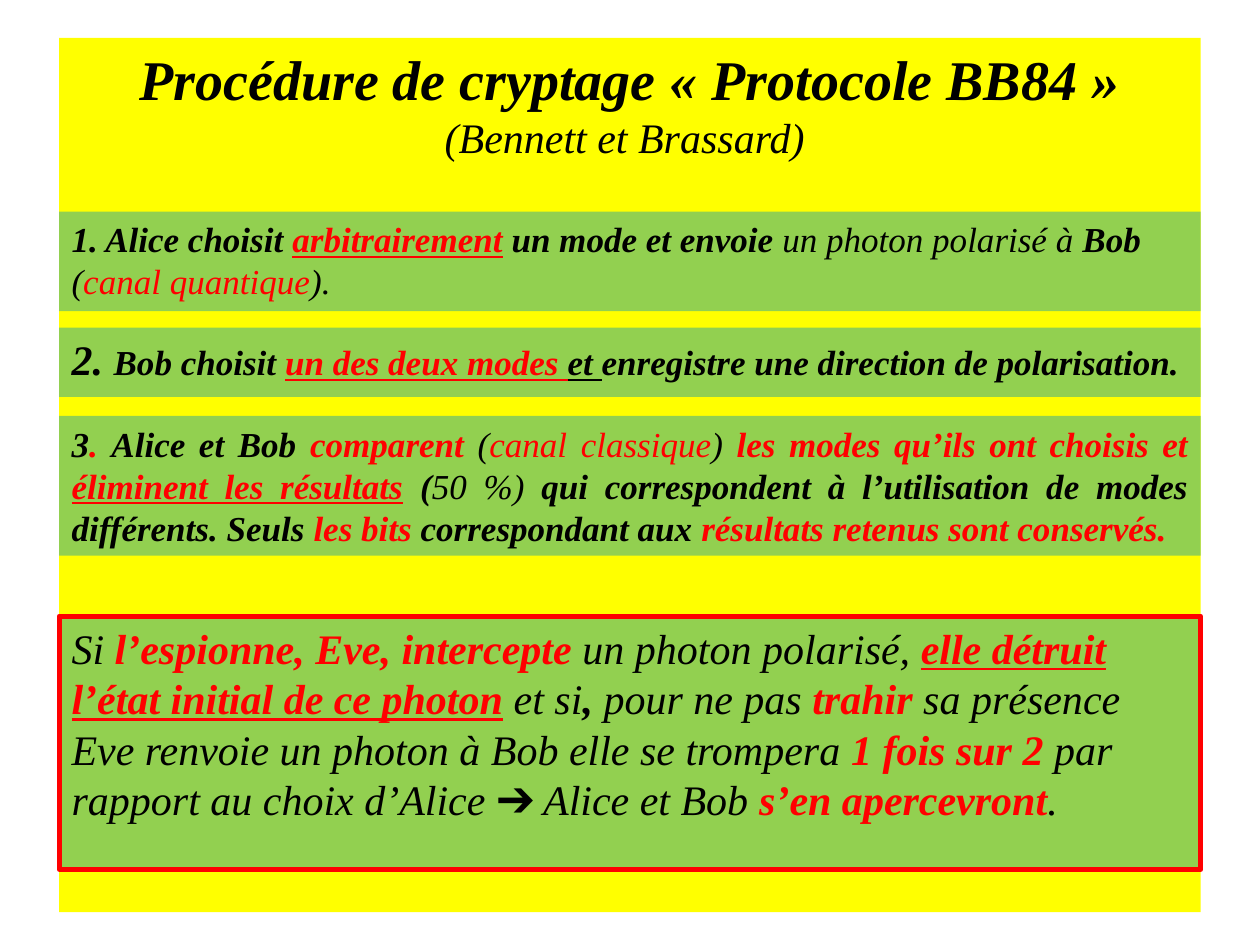
from dataclasses import dataclass

from pptx import Presentation
from pptx.dml.color import RGBColor
from pptx.enum.text import MSO_ANCHOR, MSO_AUTO_SIZE, PP_ALIGN
from pptx.util import Inches, Pt

BLACK = RGBColor(0x00, 0x00, 0x00)
RED = RGBColor(0xFF, 0x00, 0x00)
YELLOW = RGBColor(0xFF, 0xFF, 0x00)
GREEN = RGBColor(0x92, 0xD0, 0x50)
FONT = "Times New Roman"
LEFT, WIDTH = 0.47, 9.06


@dataclass(frozen=True)
class Phrase:
    text: str
    bold: bool = False
    color: RGBColor = BLACK
    under: bool = False
    size: int | None = None


@dataclass(frozen=True)
class Panel:
    top: float
    height: float
    size: int
    words: tuple[Phrase, ...]
    align: PP_ALIGN = PP_ALIGN.LEFT
    framed: bool = False


def plain(text: str, color: RGBColor = BLACK) -> Phrase:
    return Phrase(text, color=color)


def bold(text: str, color: RGBColor = BLACK, size: int | None = None) -> Phrase:
    return Phrase(text, True, color, size=size)


def lined(text: str, color: RGBColor = RED) -> Phrase:
    return Phrase(text, True, color, True)


def place(shape, top: float, height: float, fill: RGBColor) -> None:
    shape.left, shape.top = Inches(LEFT), Inches(top)
    shape.width, shape.height = Inches(WIDTH), Inches(height)
    shape.fill.solid()
    shape.fill.fore_color.rgb = fill
    frame = shape.text_frame
    frame.word_wrap = True
    frame.auto_size = MSO_AUTO_SIZE.NONE
    frame.vertical_anchor = MSO_ANCHOR.TOP


def write(para, words: tuple[Phrase, ...], size: int, align: PP_ALIGN) -> None:
    para.alignment = align
    for phrase in words:
        run = para.add_run()
        run.text = phrase.text
        font = run.font
        font.name = FONT
        font.size = Pt(phrase.size or size)
        font.italic = True
        font.bold = phrase.bold
        font.underline = phrase.under
        font.color.rgb = phrase.color


def draw(slide, panel: Panel) -> None:
    box = slide.shapes.add_textbox(0, 0, 0, 0)
    place(box, panel.top, panel.height, GREEN)
    if panel.framed:
        box.line.color.rgb = RED
        box.line.width = Pt(3)
    write(box.text_frame.paragraphs[0], panel.words, panel.size, panel.align)


PANELS = (
    Panel(1.68, 0.79, 20, (
        bold("1. Alice choisit "),
        lined("arbitrairement"),
        bold(" un mode et envoie "),
        plain("un photon polarisé à "),
        bold("Bob "),
        plain("("),
        plain("canal quantique", RED),
        plain(")."),
    )),
    Panel(2.6, 0.55, 20, (
        bold("2. ", size=24),
        bold("Bob choisit "),
        lined("un des deux modes "),
        lined("et ", BLACK),
        bold("enregistre une direction de polarisation."),
    )),
    Panel(3.3, 1.11, 20, (
        bold("3"),
        bold(". ", RED),
        bold("Alice et Bob "),
        bold("comparent ", RED),
        plain("("),
        plain("canal classique", RED),
        plain(") "),
        bold("les modes qu’ils ont choisis et ", RED),
        lined("éliminent les résultats"),
        bold(" ("),
        plain("50 %) "),
        bold("qui correspondent à l’utilisation de modes différents. Seuls "),
        bold("les bits ", RED),
        bold("correspondant aux "),
        bold("résultats retenus sont conservés.", RED),
    ), PP_ALIGN.JUSTIFY),
    Panel(4.89, 2.01, 24, (
        plain("Si "),
        bold("l’espionne, Eve, intercepte", RED),
        plain(" un photon polarisé, "),
        lined("elle détruit l’état initial de ce photon"),
        plain(" et si"),
        bold(","),
        plain(" pour ne pas "),
        bold("trahir", RED),
        plain(" sa présence Eve renvoie un photon à Bob elle se trompera "),
        bold("1 fois sur 2 ", RED),
        plain("par rapport au choix d’Alice ➔ Alice et Bob "),
        bold("s’en apercevront", RED),
        plain("."),
    ), framed=True),
)


def main() -> None:
    deck = Presentation()
    deck.slide_width, deck.slide_height = Inches(10), Inches(7.5)
    slide = deck.slides.add_slide(deck.slide_layouts[5])
    title = slide.shapes.title
    place(title, 0.3, 6.94, YELLOW)
    frame = title.text_frame
    head = bold("Procédure de cryptage « Protocole BB84 »")
    names = plain("(Bennett et Brassard) ")
    write(frame.paragraphs[0], (head,), 32, PP_ALIGN.CENTER)
    write(frame.add_paragraph(), (names,), 24, PP_ALIGN.CENTER)
    for panel in PANELS:
        draw(slide, panel)
    deck.save("out.pptx")


if __name__ == "__main__":
    main()
